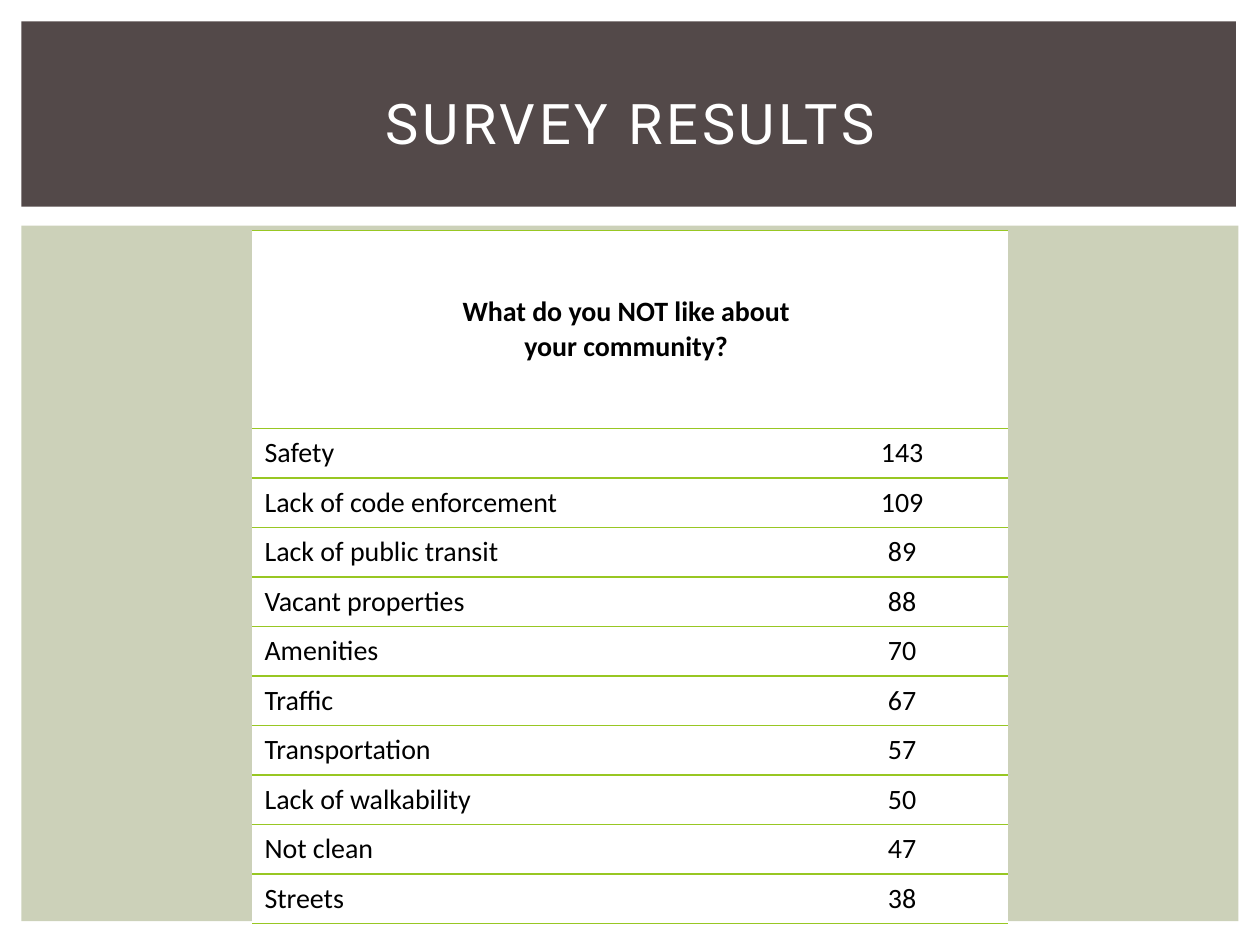
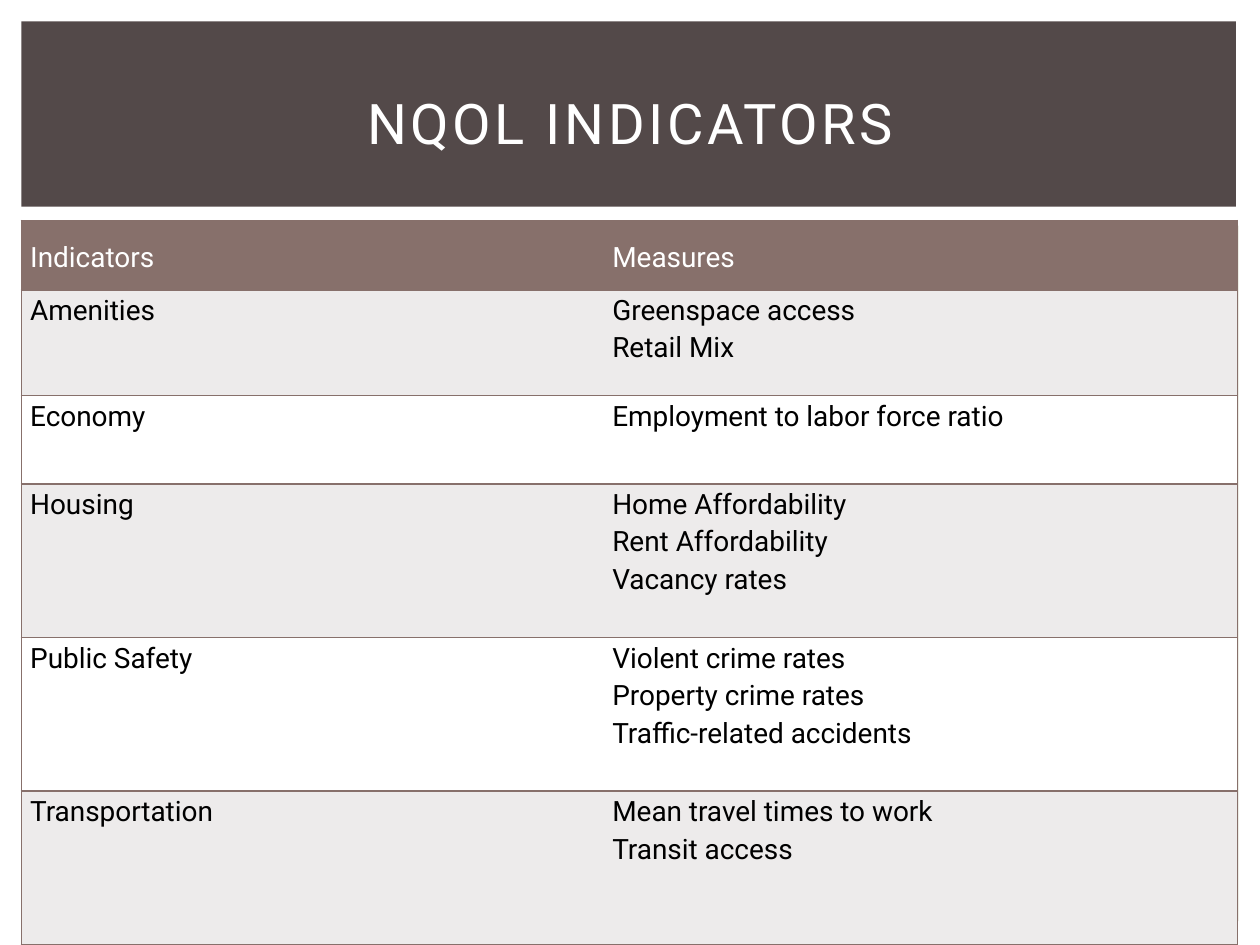
from lxml import etree
from pptx import Presentation
from pptx.dml.color import RGBColor
from pptx.enum.shapes import MSO_SHAPE as Shape
from pptx.enum.text import MSO_ANCHOR as Anchor, PP_ALIGN as Align
from pptx.oxml.ns import qn
from pptx.util import Inches, Pt

SURVEY = {
    "title": "SURVEY RESULTS",
    "question": ["What do you NOT like about", "your community?"],
    "answers": [
        ("Safety", 143),
        ("Lack of code enforcement", 109),
        ("Lack of public transit", 89),
        ("Vacant properties", 88),
        ("Amenities", 70),
        ("Traffic", 67),
        ("Transportation", 57),
        ("Lack of walkability", 50),
        ("Not clean", 47),
        ("Streets", 38),
    ],
}

INDICATORS = {
    "title": "NQOL INDICATORS",
    "heads": ("Indicators", "Measures"),
    "rows": [
        ("Amenities", ["Greenspace access", "Retail Mix"], 0.84),
        ("Economy", ["Employment to labor force ratio"], 0.7),
        ("Housing", ["Home Affordability", "Rent Affordability", "Vacancy rates"], 1.22),
        ("Public Safety", ["Violent crime rates", "Property crime rates",
                           "Traffic-related accidents"], 1.22),
        ("Transportation", ["Mean travel times to work", "Transit access"], 1.22),
    ],
}

WHITE, BLACK = "FFFFFF", "000000"
BAND, PANEL = "534949", "CCD1B9"
GREEN, BROWN, PALE = "98C723", "87706B", "EDEBEB"
NO_STYLE = "{2D5ABB26-0587-4C30-8999-92F81FD0307C}"


def paint(target, color):
    target.fill.solid()
    target.fill.fore_color.rgb = RGBColor.from_string(color)


def write(frame, lines, size=16, font="Roboto", color=BLACK, bold=False,
          align=Align.LEFT, line_spacing=None, tracking=None):
    frame.word_wrap = True
    for index, line in enumerate(lines):
        paragraph = frame.paragraphs[0] if index == 0 else frame.add_paragraph()
        paragraph.alignment = align
        if line_spacing:
            paragraph.line_spacing = line_spacing
        run = paragraph.add_run()
        run.text = line
        run.font.size = Pt(size)
        run.font.name = font
        run.font.bold = bold
        run.font.color.rgb = RGBColor.from_string(color)
        if tracking:
            run.font._element.set("spc", str(tracking * 100))


def add_block(slide, box, color):
    block = slide.shapes.add_shape(Shape.RECTANGLE, *map(Inches, box))
    block.shadow.inherit = False
    paint(block, color)
    block.line.fill.background()


def add_titled_slide(presentation, title):
    slide = presentation.slides.add_slide(presentation.slide_layouts[6])
    add_block(slide, (0.17, 1.79, 9.66, 5.52), PANEL)
    add_block(slide, (0.17, 0.17, 9.64, 1.47), BAND)
    title_box = slide.shapes.add_textbox(*map(Inches, (0.42, 0.39, 9.17, 1.15)))
    title_box.text_frame.vertical_anchor = Anchor.MIDDLE
    write(title_box.text_frame, [title], size=32, color=WHITE,
          align=Align.CENTER, tracking=2)
    return slide


def add_plain_table(slide, left, top, widths, heights):
    table = slide.shapes.add_table(
        len(heights), len(widths), Inches(left), Inches(top),
        Inches(sum(widths)), Inches(sum(heights))).table
    table._tbl.tblPr.find(qn("a:tableStyleId")).text = NO_STYLE
    for column, width in zip(table.columns, widths):
        column.width = Inches(width)
    for row, height in zip(table.rows, heights):
        row.height = Inches(height)
    return table


def format_cell(cell, fill, border, sides, left=0, right=0, anchor=Anchor.MIDDLE):
    cell.margin_left, cell.margin_right = Inches(left), Inches(right)
    cell.margin_top = cell.margin_bottom = 0
    cell.vertical_anchor = anchor
    properties = cell._tc.get_or_add_tcPr()
    for side in sides:
        line = etree.SubElement(properties, qn("a:ln" + side), w=str(Pt(1)))
        solid = etree.SubElement(line, qn("a:solidFill"))
        etree.SubElement(solid, qn("a:srgbClr"), val=border)
    paint(cell, fill)


def build_survey(presentation):
    slide = add_titled_slide(presentation, SURVEY["title"])
    answers = SURVEY["answers"]
    question_height, table_height = 1.57, 5.5
    answer_height = (table_height - question_height) / len(answers)
    table = add_plain_table(slide, 2, 1.83, [4.32, 1.68],
                            [question_height] + [answer_height] * len(answers))
    question = table.cell(0, 0)
    question.merge(table.cell(0, 1))
    format_cell(question, WHITE, GREEN, "TB", right=0.06)
    format_cell(table.cell(0, 1), WHITE, GREEN, "TB")
    write(question.text_frame, SURVEY["question"], font="Calibri", bold=True,
          align=Align.CENTER)
    for row, (answer, votes) in enumerate(answers, 1):
        answer_cell, votes_cell = table.cell(row, 0), table.cell(row, 1)
        format_cell(answer_cell, WHITE, GREEN, "TB", left=0.1)
        format_cell(votes_cell, WHITE, GREEN, "TB")
        write(answer_cell.text_frame, [answer], font="Calibri")
        write(votes_cell.text_frame, [str(votes)], font="Calibri", align=Align.CENTER)


def build_indicators(presentation):
    slide = add_titled_slide(presentation, INDICATORS["title"])
    indicator_head, measure_head = INDICATORS["heads"]
    rows = [(indicator_head, [measure_head], 0.55)] + INDICATORS["rows"]
    table = add_plain_table(slide, 0.17, 1.75, [4.5, 5.15],
                            [height for _, _, height in rows])
    for row, (indicator, measures, _) in enumerate(rows):
        if row == 0:
            fill, color, anchor = BROWN, WHITE, Anchor.MIDDLE
        else:
            fill, color, anchor = PALE if row % 2 else WHITE, BLACK, Anchor.TOP
        columns = [([indicator], "LTB", 0.07), (measures, "RTB", 0.19)]
        for column, (lines, sides, left) in enumerate(columns):
            cell = table.cell(row, column)
            format_cell(cell, fill, BROWN, sides, left=left, right=0.07, anchor=anchor)
            write(cell.text_frame, lines, color=color, line_spacing=1.15)


def main():
    presentation = Presentation()
    presentation.slide_width, presentation.slide_height = Inches(10), Inches(7.5)
    build_survey(presentation)
    build_indicators(presentation)
    presentation.save("out.pptx")


if __name__ == "__main__":
    main()
